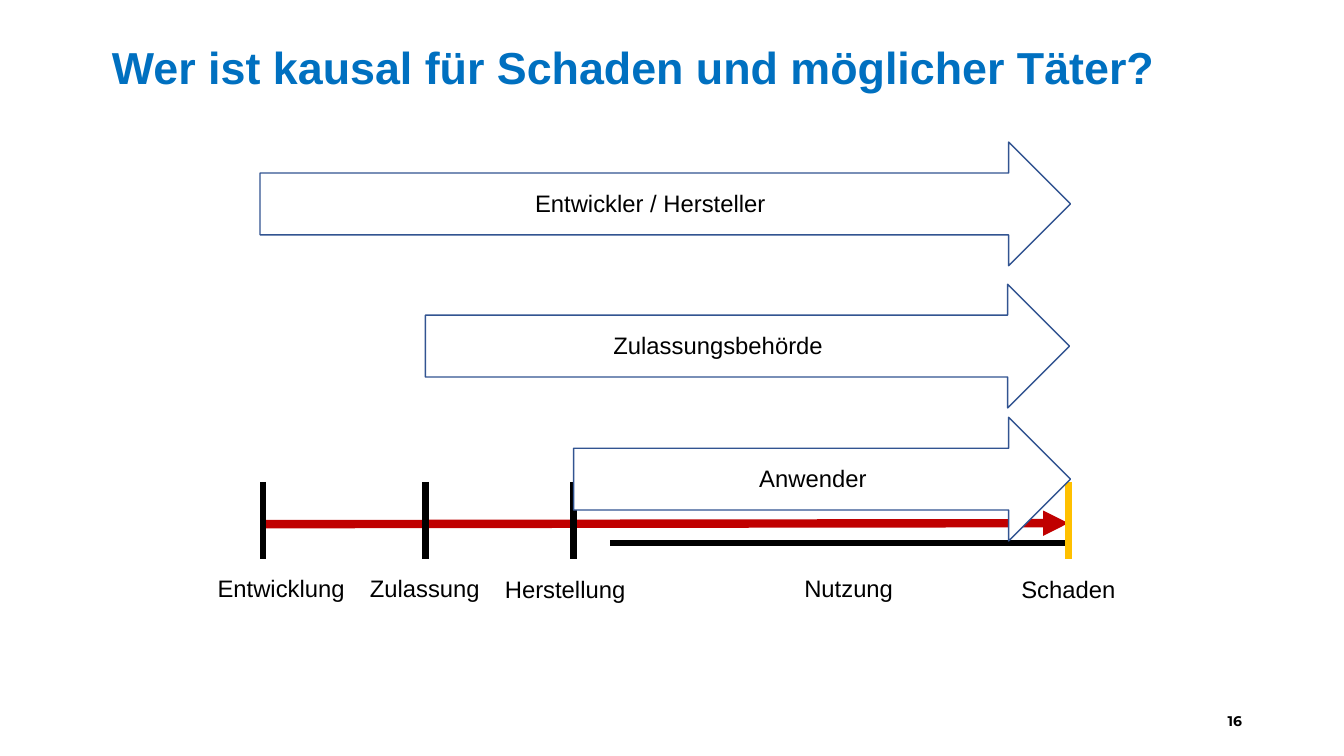
"""Build the slide on who causes harm along the life of a product."""
import pptx
import pptx.util
import pptx.dml.color
import pptx.enum.shapes
import pptx.enum.text
import pptx.oxml

THEME = {
    "title": "0070C0", "text": "000000", "time": "C00000", "harm": "FFC000",
    "fill": "FFFFFF", "edge": "325491",
    "font": "Arial", "page font": "Montserrat",
    "title size": 32, "text size": 17, "page size": 10,
    "thick": 6, "mark": 4.5, "thin": 1,
}
ALIGN = pptx.enum.text.PP_ALIGN
ANCHOR = pptx.enum.text.MSO_ANCHOR
SHAPE = pptx.enum.shapes.MSO_SHAPE
LINK = pptx.enum.shapes.MSO_CONNECTOR
NS = 'xmlns:a="http://schemas.openxmlformats.org/drawingml/2006/main"'

deck = pptx.Presentation()
deck.slide_width = pptx.util.Inches(13.33)
deck.slide_height = pptx.util.Inches(7.5)
slide = deck.slides.add_slide(deck.slide_layouts[6])
col = deck.slide_width / 40
row = deck.slide_height / 22.5


def write(text, left, top, width, height=1.17, size="text size", font="font",
          color="text", bold=False, align=ALIGN.LEFT, anchor=ANCHOR.TOP,
          inset=0.1, inset_top=0.05, spacing=None):
    box = slide.shapes.add_textbox(int(left * col), int(top * row),
                                   int(width * col), int(height * row))
    frame = box.text_frame
    frame.word_wrap = True
    frame.vertical_anchor = anchor
    frame.margin_left = frame.margin_right = pptx.util.Inches(inset)
    frame.margin_top = pptx.util.Inches(inset_top)
    par = frame.paragraphs[0]
    par.alignment = align
    if spacing:
        par.line_spacing = pptx.util.Pt(spacing)
    run = par.add_run()
    run.text = text
    run.font.name = THEME[font]
    run.font.size = pptx.util.Pt(THEME[size])
    run.font.bold = bold
    run.font.color.rgb = pptx.dml.color.RGBColor.from_string(THEME[color])


def draw(x1, y1, x2, y2, color="text", width="mark", head=False):
    line = slide.shapes.add_connector(LINK.STRAIGHT, int(x1 * col), int(y1 * row),
                                      int(x2 * col), int(y2 * row))
    line.line.color.rgb = pptx.dml.color.RGBColor.from_string(THEME[color])
    line.line.width = pptx.util.Pt(THEME[width])
    props = line.element.spPr
    if head:
        props.find(pptx.oxml.ns.qn("a:ln")).append(
            pptx.oxml.parse_xml(f'<a:tailEnd {NS} type="triangle"/>'))
    props.append(pptx.oxml.parse_xml(f"<a:effectLst {NS}/>"))


start, permit, make, harm = 7.83, 12.66, 17.07, 31.8
draw(start, 15.6, harm, 15.57, color="time", width="thick", head=True)
for x in (start, permit, make):
    draw(x, 14.34, x, 16.65)
draw(harm, 16.17, 18.15, 16.17)
draw(harm, 14.34, harm, 16.65, color="harm")

for text, left, top, width, align in (
    ("Entwicklung", 6.18, 16.92, 4.53, ALIGN.LEFT),
    ("Zulassung", 10.71, 16.92, 4.02, ALIGN.LEFT),
    ("Herstellung", 14.73, 16.95, 4.53, ALIGN.LEFT),
    ("Nutzung", 23.43, 16.92, 3.66, ALIGN.CENTER),
    ("Schaden", 29.97, 16.95, 3.66, ALIGN.CENTER),
):
    write(text, left, top, width, align=align)

for text, left, top, tip, label in (
    ("Entwickler / Hersteller ", 7.74, 4.23, 31.86, 10.44),
    ("Zulassungsbehörde", permit, 8.46, 31.83, 12.36),
    ("Anwender", make, 12.42, 31.86, 15.18),
):
    arrow = slide.shapes.add_shape(SHAPE.RIGHT_ARROW, int(left * col), int(top * row),
                                   int((tip - left) * col), int(3.68 * row))
    arrow.shadow.inherit = False
    arrow.fill.solid()
    arrow.fill.fore_color.rgb = pptx.dml.color.RGBColor.from_string(THEME["fill"])
    arrow.line.color.rgb = pptx.dml.color.RGBColor.from_string(THEME["edge"])
    arrow.line.width = pptx.util.Pt(THEME["thin"])
    write(text, label, top + 1.24, 18.03, align=ALIGN.CENTER)

write("Wer ist kausal für Schaden und möglicher Täter?", 3.33, 1.29, 34.56, 2.94,
      size="title size", color="title", bold=True, inset=0, inset_top=0.08, spacing=30)
write("16", 28.26, 20.85, 9, 1.2, size="page size", font="page font", bold=True,
      align=ALIGN.RIGHT, anchor=ANCHOR.MIDDLE)

deck.save("out.pptx")
